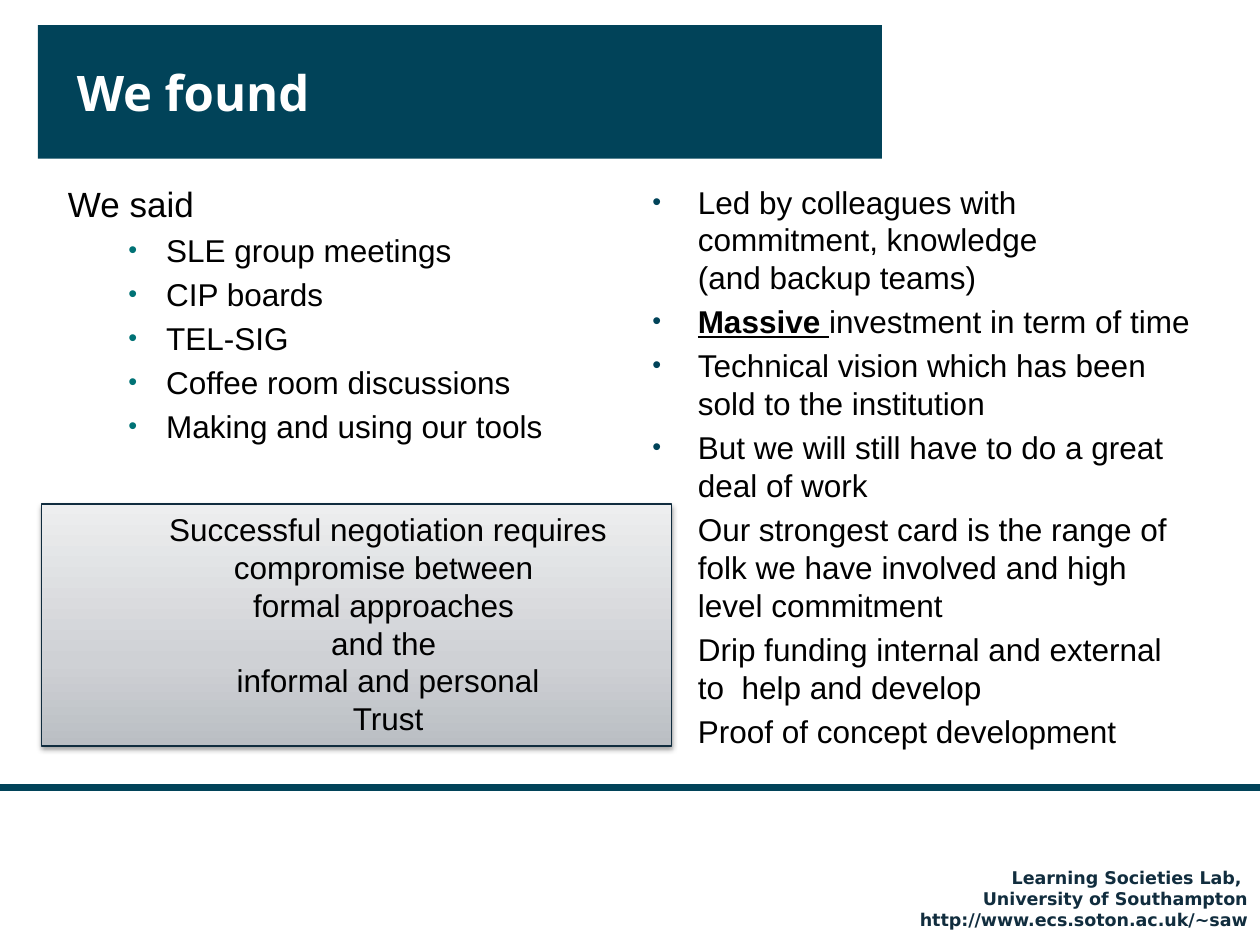
from pptx import Presentation
from pptx.dml.color import RGBColor
from pptx.enum.shapes import MSO_CONNECTOR, MSO_SHAPE
from pptx.enum.text import MSO_ANCHOR, PP_ALIGN
from pptx.oxml import parse_xml
from pptx.oxml.ns import nsdecls
from pptx.util import Inches, Pt
from lxml.etree import SubElement
from pptx.oxml.ns import qn

NAVY = RGBColor(0x01, 0x43, 0x59)
TEAL = RGBColor(0x00, 0x72, 0x75)
INK = RGBColor(0x11, 0x2D, 0x3E)
EDGE = RGBColor(0x10, 0x2C, 0x3E)
WHITE = RGBColor(0xFF, 0xFF, 0xFF)
BLACK = RGBColor(0x00, 0x00, 0x00)
GRADIENT = [(0, "BABEC3"), (35, "CFD1D5"), (100, "EDEEEF")]

TITLE = "We found"
WE_SAID = "We said"
CHANNELS = [
    "SLE group meetings",
    "CIP boards",
    "TEL-SIG",
    "Coffee room discussions",
    "Making and using our tools",
]
EMPHASIS = "Massive "
FINDINGS = [
    "Led by colleagues with commitment, knowledge \n(and backup teams)",
    EMPHASIS + "investment in term of time",
    "Technical vision which has been sold to the institution",
    "But we will still have to do a great deal of work",
    "Our strongest card is the range of folk we have involved and high level commitment",
    "Drip funding internal and external to  help and develop",
    "Proof of concept development",
]
CONCLUSION = [
    "Successful negotiation requires compromise between \n"
    "formal approaches \nand the \ninformal and personal",
    "Trust",
]
FOOTER = ("Learning Societies Lab, \nUniversity of Southampton\n"
          "http://www.ecs.soton.ac.uk/~saw")


def add_box(page, left, top, width, height):
    box = page.shapes.add_textbox(*map(Inches, (left, top, width, height)))
    box.text_frame.word_wrap = True
    return box.text_frame


def add_rectangle(page, left, top, width, height):
    shape = page.shapes.add_shape(
        MSO_SHAPE.RECTANGLE, *map(Inches, (left, top, width, height)))
    shape.shadow.inherit = False
    return shape


def add_para(frame, text, size, color=BLACK, font="Arial", bold=False,
             indent=(0, 0), bullet=None, gap=0, align=PP_ALIGN.LEFT):
    """Fill the frame's empty first paragraph, or append another one."""
    first = not frame.paragraphs[0].runs
    para = frame.paragraphs[0] if first else frame.add_paragraph()
    props = para._p.get_or_add_pPr()
    margin, hanging = indent
    props.set("marL", str(Inches(margin)))
    props.set("indent", str(Inches(hanging)))
    para.alignment = align
    if not first:
        para.space_before = Pt(gap)
    if bullet is not None:
        tint = SubElement(props, qn("a:buClr"))
        SubElement(tint, qn("a:srgbClr"), val=str(bullet))
        SubElement(props, qn("a:buSzPct"), val="80000")
        SubElement(props, qn("a:buFont"), typeface="Arial")
        SubElement(props, qn("a:buChar"), char="•")
    if text.startswith(EMPHASIS):
        span = para.add_run()
        span.text = EMPHASIS
        span.font.bold = span.font.underline = True
        para.add_run().text = text.removeprefix(EMPHASIS)
    else:
        para.text = text
    para.font.size = Pt(size)
    para.font.name = font
    para.font.bold = bold
    para.font.color.rgb = color


def shade(shape):
    """Give the shape an upward gradient and a soft shadow below."""
    stops = "".join(
        f'<a:gs pos="{pos * 1000}"><a:srgbClr val="{color}"/></a:gs>'
        for pos, color in GRADIENT)
    props = shape._element.spPr
    props.find(qn("a:prstGeom")).addnext(parse_xml(
        f'<a:gradFill {nsdecls("a")} rotWithShape="1"><a:gsLst>{stops}</a:gsLst>'
        '<a:lin ang="16200000" scaled="0"/></a:gradFill>'))
    props.find(qn("a:effectLst")).append(parse_xml(
        f'<a:outerShdw {nsdecls("a")} blurRad="{Pt(3.1)}" dist="{Pt(1.6)}"'
        ' dir="5400000" rotWithShape="0"><a:srgbClr val="000000">'
        '<a:alpha val="38000"/></a:srgbClr></a:outerShdw>'))


def main():
    deck = Presentation()
    deck.slide_width, deck.slide_height = Inches(10), Inches(7.5)
    page = deck.slides.add_slide(deck.slide_layouts[6])

    rule = page.shapes.add_connector(
        MSO_CONNECTOR.STRAIGHT, 0, Inches(6.25), Inches(10), Inches(6.25))
    rule.line.color.rgb = NAVY
    rule.line.width = Pt(4.5)
    SubElement(rule._element.spPr, qn("a:effectLst"))

    footer = add_box(page, 7, 6.83, 3, 0.61)
    add_para(footer, FOOTER, 10, INK, "DejaVu Sans", True, align=PP_ALIGN.RIGHT)

    banner = add_rectangle(page, 0.3, 0.2, 6.7, 1.06)
    banner.fill.solid()
    banner.fill.fore_color.rgb = NAVY
    banner.line.fill.background()
    banner.text_frame.margin_left = Inches(0.31)
    banner.text_frame.vertical_anchor = MSO_ANCHOR.MIDDLE
    add_para(banner.text_frame, TITLE, 28, WHITE, "Open Sans", True,
             indent=(0.19, -0.19))

    said = add_box(page, 0.44, 1.4, 4.48, 4.7)
    add_para(said, WE_SAID, 20, indent=(0.36, -0.36))
    for channel in CHANNELS:
        add_para(said, channel, 18, indent=(0.78, -0.3), bullet=TEAL, gap=3.6)

    found = add_box(page, 5.08, 1.4, 4.48, 4.7)
    for finding in FINDINGS:
        add_para(found, finding, 18, indent=(0.36, -0.36), bullet=NAVY, gap=3.6)

    panel = add_rectangle(page, 0.33, 4, 5, 1.92)
    shade(panel)
    panel.line.color.rgb = EDGE
    panel.line.width = Pt(0.75)
    panel.text_frame.vertical_anchor = MSO_ANCHOR.TOP
    for sentence in CONCLUSION:
        add_para(panel.text_frame, sentence, 18, indent=(0.5, 0),
                 align=PP_ALIGN.CENTER)

    deck.save("out.pptx")


if __name__ == "__main__":
    main()
